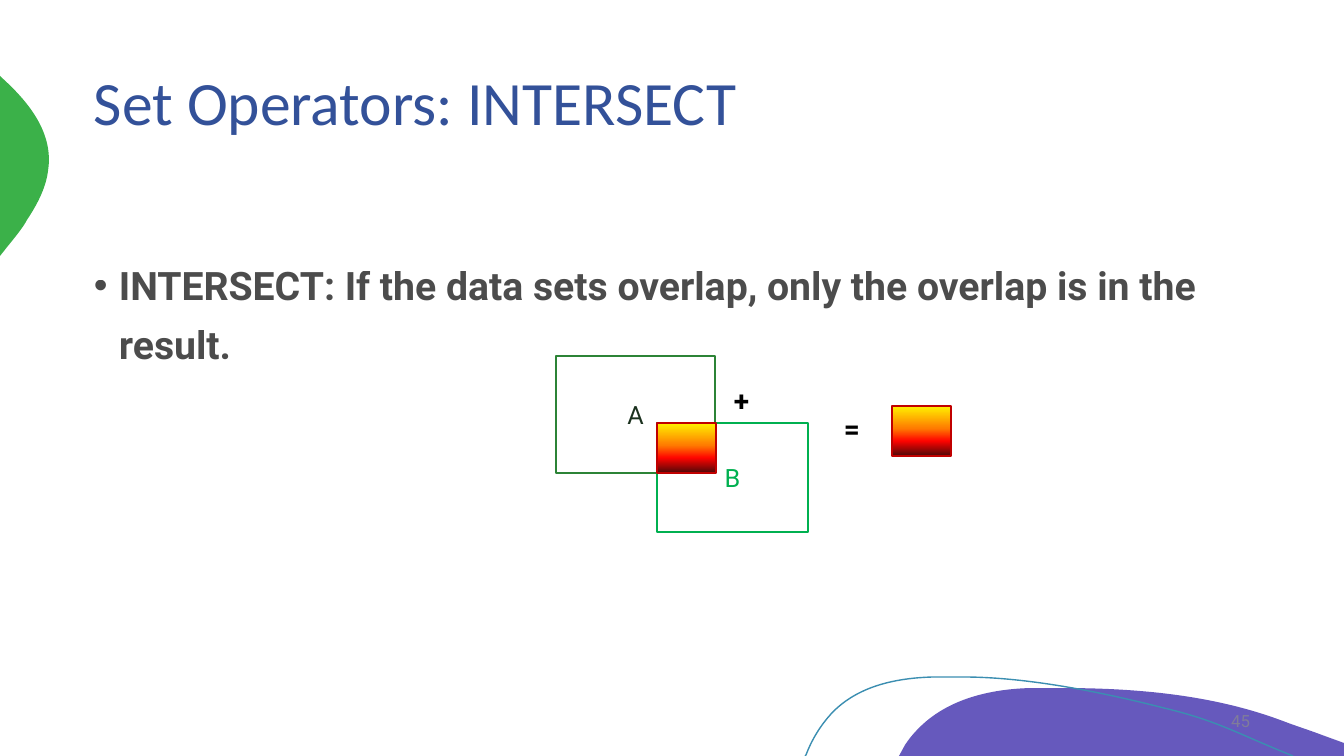
import lxml.etree
import pptx
import pptx.dml.color
import pptx.enum.shapes
import pptx.enum.text
import pptx.oxml
import pptx.oxml.ns
import pptx.util

PX = 914400 / 100.8
COLORS = {
    "purple": "6659BD", "leaf": "3BB149", "wave": "3B8EB1", "title": "335199",
    "black": "000000", "page": "8C8C8C", "set_a": "2C8336", "label_a": "1B311E",
    "set_b": "00B050", "overlap": "C00000",
}
OVERLAP_STOPS = [(0, "FFF200"), (45, "FF7A00"), (70, "FF0300"), (100, "4D0808")]
PAGE_NUMBER = 45
NAMESPACE = pptx.oxml.ns.nsdecls("a")
ALIGN = pptx.enum.text.PP_ALIGN
ANCHOR = pptx.enum.text.MSO_ANCHOR


def px(length):
    """Turn a pixel length into EMU."""
    return pptx.util.Emu(round(length * PX))


def rgb(name):
    """Look up a named colour."""
    return pptx.dml.color.RGBColor.from_string(COLORS[name])


def style_shape(shape, fill=None, line=None):
    """Set a plain fill and outline without a shadow."""
    shape.shadow.inherit = False
    if fill:
        shape.fill.solid()
        shape.fill.fore_color.rgb = rgb(fill)
    else:
        shape.fill.background()
    if line:
        shape.line.color.rgb = rgb(line)
        shape.line.width = pptx.util.Pt(1)
    else:
        shape.line.fill.background()


def write(shape, text, size, color, font="Roboto", bold=False, align=ALIGN.LEFT,
          anchor=ANCHOR.TOP, opacity=100):
    """Write one paragraph in a shape and return it."""
    frame = shape.text_frame
    frame.word_wrap = True
    frame.vertical_anchor = anchor
    paragraph = frame.paragraphs[0]
    paragraph.text = text
    paragraph.alignment = align
    paragraph.font.name = font
    paragraph.font.size = pptx.util.Pt(size)
    paragraph.font.bold = bold
    paragraph.font.color.rgb = rgb(color)
    if opacity < 100:
        tint = paragraph.font._element.find(".//" + pptx.oxml.ns.qn("a:srgbClr"))
        alpha = lxml.etree.SubElement(tint, pptx.oxml.ns.qn("a:alpha"))
        alpha.set("val", str(opacity * 1000))
    return paragraph


def add_text(shapes, box, text, size, color, **options):
    """Add a text box and return its paragraph."""
    return write(shapes.add_textbox(*map(px, box)), text, size, color, **options)


def add_bullet(paragraph, indent):
    """Give a paragraph a hanging bullet."""
    properties = paragraph._p.get_or_add_pPr()
    properties.set("marL", str(px(indent)))
    properties.set("indent", str(-px(indent)))
    text_defaults = properties.find(pptx.oxml.ns.qn("a:defRPr"))
    for mark in ('buFont {} typeface="Arial"', 'buChar {} char="•"'):
        text_defaults.addprevious(
            pptx.oxml.parse_xml(f"<a:{mark.format(NAMESPACE)}/>"))


def add_page_number(shapes):
    """Add the slide number as a live field."""
    paragraph = add_text(shapes, (1092, 701, 168, 40), "", 12, "page",
                         align=ALIGN.RIGHT, anchor=ANCHOR.MIDDLE, opacity=70)
    paragraph._p.append(pptx.oxml.parse_xml(
        f'<a:fld {NAMESPACE} id="{{B6F15528-21DE-4FAA-801E-634DDDAF4B2B}}" '
        f'type="slidenum"><a:rPr lang="en-US"/><a:t>{PAGE_NUMBER}</a:t></a:fld>'))


def add_rectangle(shapes, box, line):
    """Add an outlined rectangle."""
    rectangle = shapes.add_shape(
        pptx.enum.shapes.MSO_SHAPE.RECTANGLE, *map(px, box))
    style_shape(rectangle, line=line)
    return rectangle


def add_set(shapes, box, label, line, color):
    """Add a rectangle standing for a labelled data set."""
    write(add_rectangle(shapes, box, line), label, 18, color,
          align=ALIGN.CENTER, anchor=ANCHOR.MIDDLE)


def add_overlap(shapes, left, top):
    """Add the gradient block that marks the overlap."""
    overlap = add_rectangle(shapes, (left, top, 59, 50), "overlap")
    stops = "".join(
        f'<a:gs pos="{position * 1000}"><a:srgbClr val="{color}"/></a:gs>'
        for position, color in OVERLAP_STOPS)
    gradient = pptx.oxml.parse_xml(
        f'<a:gradFill {NAMESPACE} rotWithShape="1">'
        f'<a:gsLst>{stops}</a:gsLst><a:lin ang="5400000" scaled="0"/></a:gradFill>')
    properties = overlap._element.spPr
    properties.replace(properties.find(pptx.oxml.ns.qn("a:noFill")), gradient)


def add_outline(shapes, start, segments, close=True, fill=None, line=None):
    """Draw an outline from one-point lines and three-point curves."""
    ends = [tuple(map(px, segment[-1])) for segment in segments]
    builder = shapes.build_freeform(*map(px, start), scale=1.0)
    builder.add_line_segments(ends, close=close)
    outline = builder.convert_to_shape()
    style_shape(outline, fill, line)
    steps = list(outline._element.iter(pptx.oxml.ns.qn("a:lnTo")))
    for step, segment in zip(steps, segments):
        if len(segment) == 3:
            points = "".join(
                f'<a:pt x="{px(x) - outline.left}" y="{px(y) - outline.top}"/>'
                for x, y in segment)
            step.getparent().replace(step, pptx.oxml.parse_xml(
                f"<a:cubicBezTo {NAMESPACE}>{points}</a:cubicBezTo>"))


def add_decoration(shapes):
    """Draw the coloured hill, leaf and wave at the edges."""
    add_outline(shapes, (1062, 688), [
        [(1138, 688), (1214, 695), (1283, 721)],
        [(1296, 726), (1309, 730), (1322, 735)],
        [(1344, 743)], [(1344, 756)], [(899, 756)], [(905, 745)],
        [(909, 739), (913, 734), (918, 729)],
        [(947, 699), (990, 689), (1031, 688)],
        [(1041, 688), (1052, 688), (1062, 688)],
    ], fill="purple")
    add_outline(shapes, (0, 76), [
        [(1, 77)],
        [(30, 103), (54, 134), (48, 171)],
        [(46, 188), (37, 205), (27, 220)],
        [(24, 226), (17, 235), (8, 246)],
        [(0, 256)],
    ], fill="leaf")
    add_outline(shapes, (805, 756), [
        [(806, 755)],
        [(812, 739), (821, 725), (831, 714)],
        [(857, 686), (896, 678), (933, 677)],
        [(963, 677)],
        [(1031, 677), (1109, 694), (1164, 708)],
        [(1218, 721), (1236, 733), (1293, 756)],
    ], close=False, line="wave")


def add_diagram(shapes):
    """Draw the two sets, their overlap and the result."""
    add_set(shapes, (556, 356, 159, 117), "A", "set_a", "label_a")
    add_set(shapes, (657, 423, 151, 109), "B", "set_b", "set_b")
    for sign, left, top in (("+", 724, 379), ("=", 834, 407)):
        add_text(shapes, (left, top, 67, 44), sign, 20, "black", bold=True)
    for left, top in ((657, 423), (892, 406)):
        add_overlap(shapes, left, top)


def main():
    """Build the slide and save it."""
    deck = pptx.Presentation()
    deck.slide_width, deck.slide_height = px(1344), px(756)
    deck.element.set("firstSlideNum", str(PAGE_NUMBER))
    shapes = deck.slides.add_slide(deck.slide_layouts[6]).shapes
    add_decoration(shapes)
    title = add_text(shapes, (84, 22, 1176, 168), "Set Operators: INTERSECT", 44,
                     "title", font="Calibri", anchor=ANCHOR.MIDDLE)
    title.line_spacing = 0.9
    rule = add_text(
        shapes, (84, 245, 1176, 421),
        "INTERSECT: If the data sets overlap, only the overlap is in the result.",
        28, "black", bold=True, opacity=70)
    rule.line_spacing = 1.25
    rule.space_before = pptx.util.Pt(10)
    add_bullet(rule, 25)
    add_page_number(shapes)
    add_diagram(shapes.add_group_shape().shapes)
    deck.save("out.pptx")


if __name__ == "__main__":
    main()
